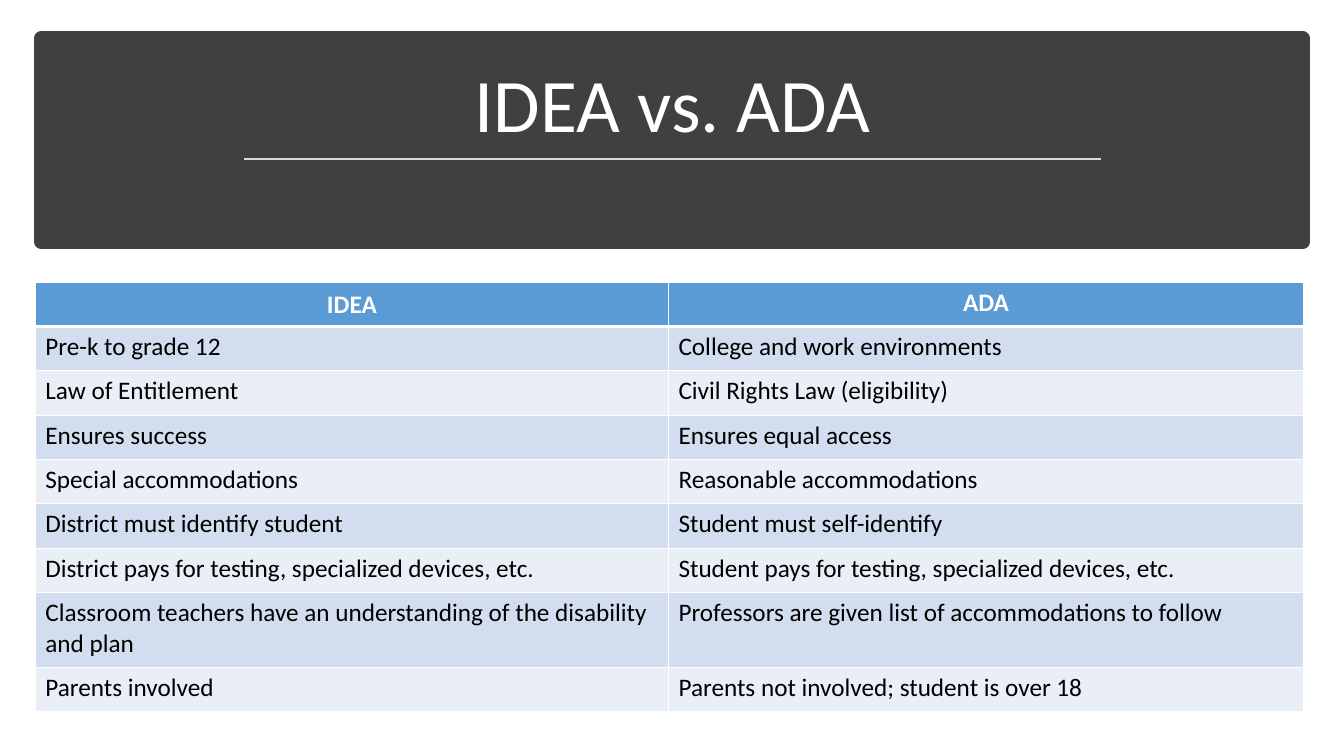
"""Builds a slide that compares IDEA and ADA in a two-column table."""
from lxml import etree
from pptx import Presentation
from pptx import util as u
from pptx.dml.color import RGBColor
from pptx.enum import shapes, text
from pptx.oxml.ns import qn

FONT = "Calibri"
WHITE, BLACK, CHARCOAL, RULE_GREY = "FFFFFF", "000000", "404040", "D9D9D9"
HEADER_BLUE, BAND_DARK, BAND_LIGHT = "5B9BD5", "D2DEEF", "EAEFF7"
COLUMN_WIDTHS = (6.28, 6.3)
ROW_HEIGHT, TALL_ROW_HEIGHT, TALL_ROW = 0.44, 0.74, 7
COMPARISON = (
    ("IDEA", "ADA"),
    ("Pre-k to grade 12", "College and work environments"),
    ("Law of Entitlement", "Civil Rights Law (eligibility)"),
    ("Ensures success", "Ensures equal access"),
    ("Special accommodations", "Reasonable accommodations"),
    ("District must identify student", "Student must self-identify"),
    ("District pays for testing, specialized devices, etc.",
     "Student pays for testing, specialized devices, etc."),
    ("Classroom teachers have an understanding of the disability and plan",
     "Professors are given list of accommodations to follow"),
    ("Parents involved", "Parents not involved; student is over 18"),
)


def paint(target, color):
    """Give a fill one solid colour."""
    target.solid()
    target.fore_color.rgb = RGBColor.from_string(color)


def write(frame, words, size, color, bold=False, align=text.PP_ALIGN.LEFT):
    """Put one formatted paragraph in a text frame."""
    frame.text = words
    para = frame.paragraphs[0]
    para.alignment = align
    for span in para.runs:
        span.font.name = FONT
        span.font.size = u.Pt(size)
        span.font.bold = bold
        paint(span.font.fill, color)
    return para


def add_banner(page):
    """Draw the dark block behind the title."""
    banner = page.shapes.add_shape(
        shapes.MSO_SHAPE.RECTANGLE,
        u.Inches(0.41), u.Inches(0.38), u.Inches(12.51), u.Inches(2.02))
    banner.shadow.inherit = False
    paint(banner.fill, CHARCOAL)
    paint(banner.line.fill, CHARCOAL)
    banner.line.width = u.Pt(10)


def place_title(page, words):
    """Format the title placeholder and bring it to the front."""
    title = page.shapes.title
    title.left, title.top = u.Inches(0.58), u.Inches(0.51)
    title.width, title.height = u.Inches(12.18), u.Inches(1.02)
    frame = title.text_frame
    frame.word_wrap = True
    frame.auto_size = text.MSO_AUTO_SIZE.NONE
    frame.vertical_anchor = text.MSO_ANCHOR.BOTTOM
    para = write(frame, words, 54, WHITE, align=text.PP_ALIGN.CENTER)
    para.line_spacing = 0.9
    title.element.getparent().append(title.element)


def add_rule(page):
    """Draw the thin line under the title."""
    rule = page.shapes.add_connector(
        shapes.MSO_CONNECTOR.STRAIGHT,
        u.Inches(2.42), u.Inches(1.58), u.Inches(10.92), u.Inches(1.58))
    paint(rule.line.fill, RULE_GREY)
    rule.line.width = u.Pt(1.75)
    etree.SubElement(rule.element.spPr, qn("a:effectLst"))


def set_borders(cell, top, bottom):
    """Give a cell white borders, with top and bottom widths in points."""
    properties = cell._tc.get_or_add_tcPr()
    for side, width in (("L", 1), ("R", 1), ("T", top), ("B", bottom)):
        border = etree.SubElement(
            properties, qn(f"a:ln{side}"), w=str(u.Pt(width)))
        solid = etree.SubElement(border, qn("a:solidFill"))
        etree.SubElement(solid, qn("a:srgbClr"), val=WHITE)


def fill_cell(cell, words, row, column):
    """Write and colour one table cell."""
    header = row == 0
    set_borders(cell, 3 if row == 1 else 1, 3 if header else 1)
    if header:
        paint(cell.fill, HEADER_BLUE)
        write(cell.text_frame, words, 18, WHITE, True, text.PP_ALIGN.CENTER)
        if column == 0:
            cell.vertical_anchor = text.MSO_ANCHOR.MIDDLE
    else:
        paint(cell.fill, BAND_DARK if row % 2 else BAND_LIGHT)
        write(cell.text_frame, words, 18, BLACK)


def add_comparison(page):
    """Build the table that sets both laws side by side."""
    heights = [TALL_ROW_HEIGHT if row == TALL_ROW else ROW_HEIGHT
               for row in range(len(COMPARISON))]
    table = page.shapes.add_table(
        len(COMPARISON), len(COLUMN_WIDTHS), u.Inches(0.35), u.Inches(2.8),
        u.Inches(sum(COLUMN_WIDTHS)), u.Inches(sum(heights))).table
    for column, width in enumerate(COLUMN_WIDTHS):
        table.columns[column].width = u.Inches(width)
    for row, entries in enumerate(COMPARISON):
        table.rows[row].height = u.Inches(heights[row])
        for column, words in enumerate(entries):
            fill_cell(table.cell(row, column), words, row, column)


def main():
    """Create the deck and save it."""
    deck = Presentation()
    deck.slide_width, deck.slide_height = u.Inches(13.33), u.Inches(7.5)
    page = deck.slides.add_slide(deck.slide_layouts.get_by_name("Title Only"))
    paint(page.background.fill, WHITE)
    add_banner(page)
    place_title(page, "IDEA vs. ADA")
    add_rule(page)
    add_comparison(page)
    deck.save("out.pptx")


if __name__ == "__main__":
    main()
